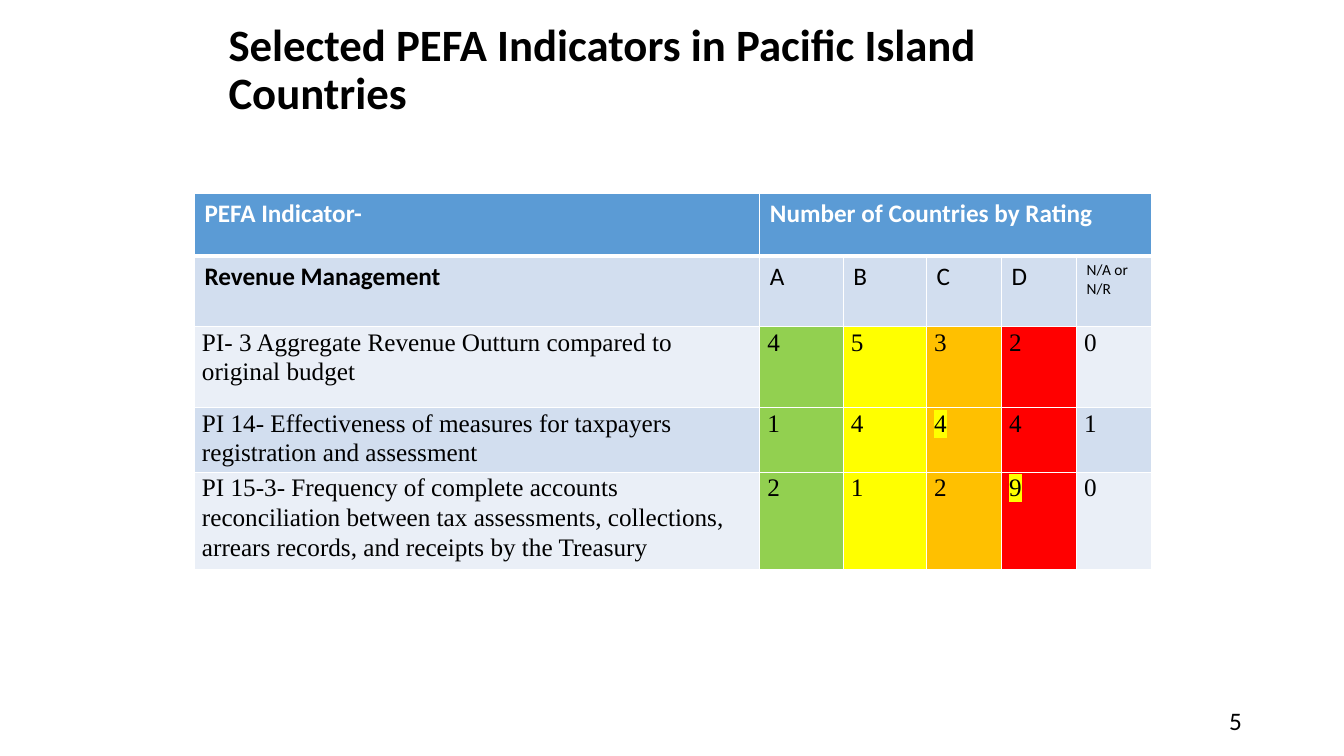
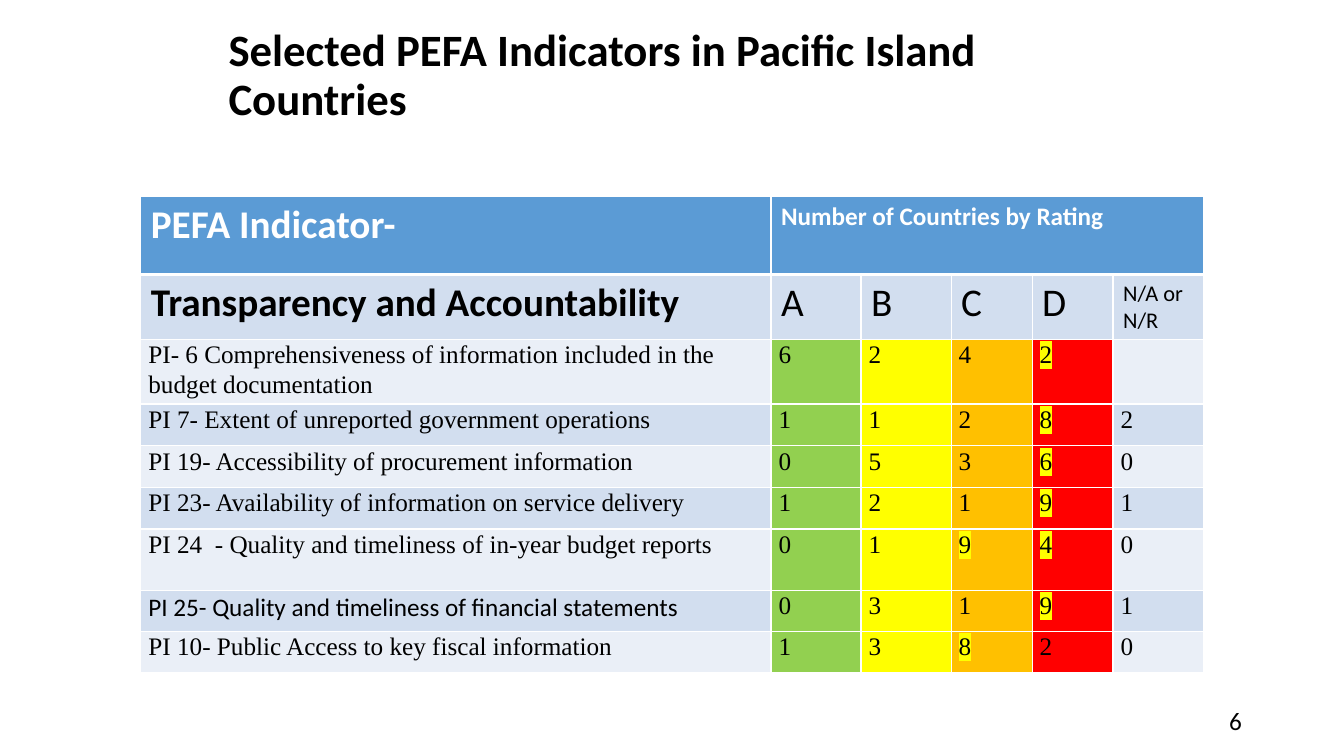
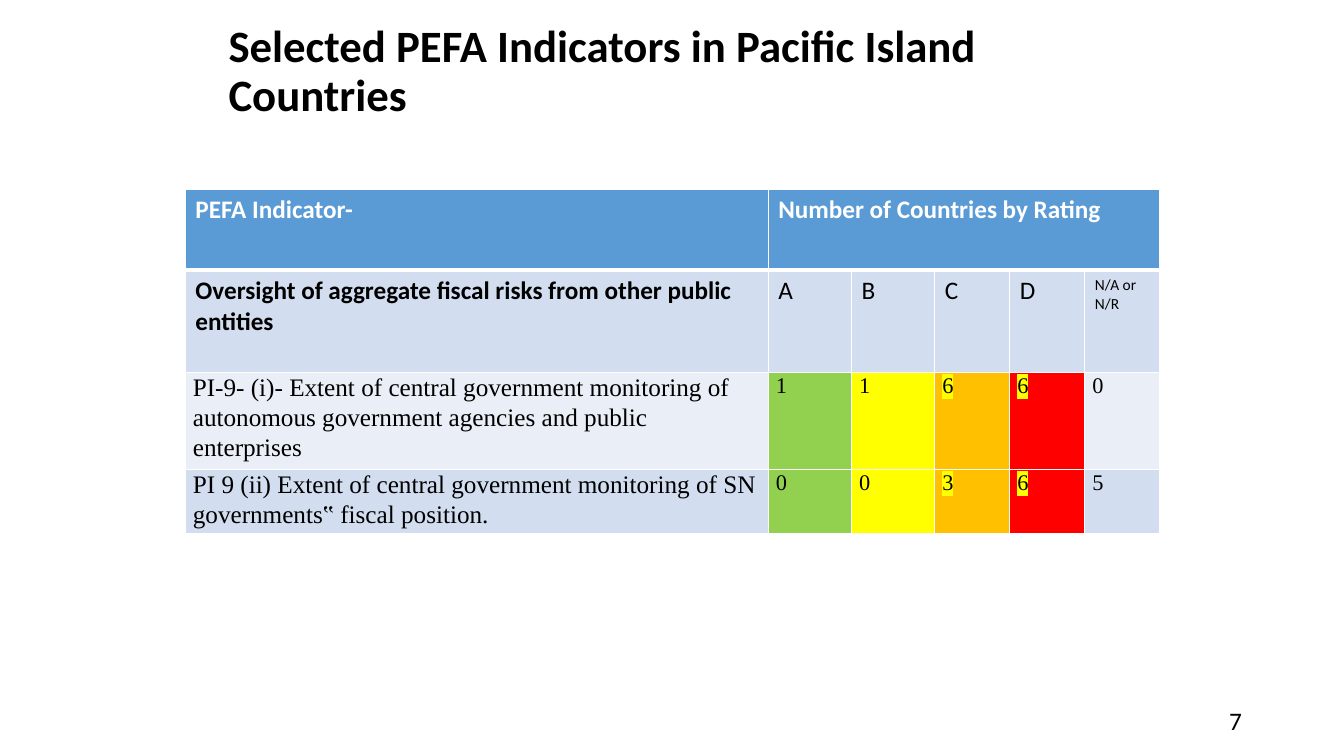
from pptx import Presentation
from pptx.dml.color import RGBColor as Rgb
from pptx.enum.text import MSO_ANCHOR as Anchor, PP_ALIGN as Align
from pptx.oxml import parse_xml
from pptx.oxml.ns import nsdecls
from pptx.util import Cm, Pt

COLOURS = {
    "text": "000000", "white": "FFFFFF", "header": "5B9BD5",
    "band_dark": "D2DEEF", "band_light": "EAEFF7", "mark": "FFFF00",
    "A": "92D050", "B": "FFFF00", "C": "FFC000", "D": "FF0000",
}
TITLE = "Selected PEFA Indicators in Pacific Island Countries"
SANS, SERIF = "Calibri", "Times New Roman"
GRADES = ["A", "B", "C", "D"]

# Lengths in cm; an asterisk after a rating marks it as highlighted
SLIDES = [
    {
        "number": "5", "title_height": 2.06, "left": 4.9, "top": 4.88,
        "columns": [14.25, 2.1, 2.1, 1.89, 1.89, 1.89],
        "rows": [1.57, 1.78, 2.04, 1.55, 2.31],
        "topic": "Revenue Management",
        "head_size": 18, "none_size": 11, "rating_size": 18,
        "indicators": [
            ("PI- 3 Aggregate Revenue Outturn compared to original budget", "4 5 3 2 0"),
            ("PI 14- Effectiveness of measures for taxpayers registration and assessment",
             "1 4 4* 4 1"),
            ("PI 15-3- Frequency of complete accounts reconciliation between tax assessments, "
             "collections, arrears records, and receipts by the Treasury", "2 1 2 9* 0"),
        ],
    },
    {
        "number": "6", "title_height": 2.34, "left": 3.55, "top": 4.95,
        "columns": [15.88, 2.27, 2.27, 2.04, 2.04, 2.27],
        "rows": [1.97, 1.63, 1.55, 1.05, 1.05, 1.05, 1.54, 1.04, 1.04],
        "topic": "Transparency and Accountability",
        "head_size": 28, "none_size": 16, "rating_size": 18,
        "sans_row": "PI 25",
        "indicators": [
            ("PI- 6 Comprehensiveness of information included in the budget documentation",
             "6 2 4 2*  0"),
            ("PI 7- Extent of unreported government operations", "1 1 2 8* 2"),
            ("PI 19- Accessibility of procurement information", "0 5 3 6* 0"),
            ("PI 23- Availability of information on service delivery", "1 2 1 9* 1"),
            ("PI 24  - Quality and timeliness of in-year budget reports", "0 1 9* 4* 0"),
            ("PI 25- Quality and timeliness of financial statements", "0 3 1 9* 1"),
            ("PI 10- Public Access to key fiscal information", "1 3 8* 2 0"),
        ],
    },
    {
        "number": "7", "title_height": 2.13, "left": 4.67, "top": 4.78,
        "columns": [14.69, 2.1, 2.1, 1.89, 1.89, 1.89],
        "rows": [2.03, 2.57, 2.33, 1.6],
        "topic": "Oversight of aggregate fiscal risks from other public entities",
        "head_size": 18, "none_size": 11, "rating_size": 16,
        "indicators": [
            ("PI-9- (i)- Extent of central government monitoring of autonomous government "
             "agencies and public enterprises", "1 1 6* 6* 0"),
            ("PI 9 (ii) Extent of central government monitoring of SN governments‟ "
             "fiscal position.", "0 0 3* 6* 5"),
        ],
    },
]


def write(frame, text, size, font=SANS, bold=False, colour="text", **layout):
    """Put one run in the frame; layout holds paragraph attributes."""
    para = frame.paragraphs[0]
    for name, value in layout.items():
        setattr(para, name, value)
    span = para.add_run()
    span.text = text.rstrip("*")
    for name, value in {"size": Pt(size), "name": font, "bold": bold}.items():
        setattr(span.font, name, value)
    span.font.color.rgb = Rgb.from_string(COLOURS[colour])
    if text.endswith("*"):
        span.font.fill._xPr.solidFill.addnext(parse_xml(
            f'<a:highlight {nsdecls("a")}><a:srgbClr val="{COLOURS["mark"]}"/></a:highlight>'))


def paint(cell, colour, top=1, bottom=1):
    """Fill a cell and give it white borders, widths in points."""
    cell.fill.solid()
    cell.fill.fore_color.rgb = Rgb.from_string(COLOURS[colour])
    sides = {"lnL": 1, "lnR": 1, "lnT": top, "lnB": bottom}
    for index, (side, width) in enumerate(sides.items()):
        cell._tc.get_or_add_tcPr().insert(index, parse_xml(
            f'<a:{side} {nsdecls("a")} w="{Pt(width)}"><a:solidFill>'
            f'<a:srgbClr val="{COLOURS["white"]}"/></a:solidFill></a:{side}>'))


deck = Presentation()
deck.slide_width, deck.slide_height = Cm(33.87), Cm(19.05)

for content in SLIDES:
    slide = deck.slides.add_slide(deck.slide_layouts[6])
    head_size = content["head_size"]

    # Title and slide number
    for text, place, size, bold, layout in [
        (TITLE, (5.51, 0.76, 22.86, content["title_height"]), 32, True, {"line_spacing": 0.9}),
        (content["number"], (23.93, 17.65, 7.62, 1.02), 18, False, {"alignment": Align.RIGHT}),
    ]:
        box = slide.shapes.add_textbox(*map(Cm, place))
        box.text_frame.word_wrap = True
        box.text_frame.vertical_anchor = Anchor.MIDDLE
        write(box.text_frame, text, size, bold=bold, **layout)

    # Table grid
    columns, rows = content["columns"], content["rows"]
    table = slide.shapes.add_table(
        len(rows), len(columns), Cm(content["left"]), Cm(content["top"]),
        Cm(sum(columns)), Cm(sum(rows))).table
    table.first_row = table.horz_banding = False
    for column, width in zip(table.columns, columns):
        column.width = Cm(width)
    for row, height in zip(table.rows, rows):
        row.height = Cm(height)

    # Header row
    for cell in table.rows[0].cells:
        paint(cell, "header", bottom=3)
    table.cell(0, 1).merge(table.cell(0, 5))
    write(table.cell(0, 0).text_frame, "PEFA Indicator-", head_size, bold=True, colour="white")
    write(table.cell(0, 1).text_frame, "Number of Countries by Rating", 18,
          bold=True, colour="white")

    # Topic and grade row
    labels = [content["topic"], *GRADES, "N/A or N/R"]
    sizes = [head_size] * 5 + [content["none_size"]]
    for index, (label, size) in enumerate(zip(labels, sizes)):
        cell = table.cell(1, index)
        paint(cell, "band_dark", top=3)
        write(cell.text_frame, label, size, bold=index == 0)

    # Indicator rows
    for row_index, (indicator, ratings) in enumerate(content["indicators"], start=2):
        band = "band_dark" if row_index % 2 else "band_light"
        sans = indicator.startswith(content.get("sans_row", "none"))
        texts = [indicator, *ratings.split(" ")]
        for index, (text, fill) in enumerate(zip(texts, [band, *GRADES, band])):
            cell = table.cell(row_index, index)
            paint(cell, fill)
            margins = {"margin_left": 0.19, "margin_right": 0.19,
                       "margin_top": 0, "margin_bottom": 0}
            for name, value in margins.items():
                setattr(cell, name, Cm(value))
            write(cell.text_frame, text, content["rating_size"] if index else 18,
                  font=SANS if sans and index == 0 else SERIF, line_spacing=1.07)

deck.save("out.pptx")
